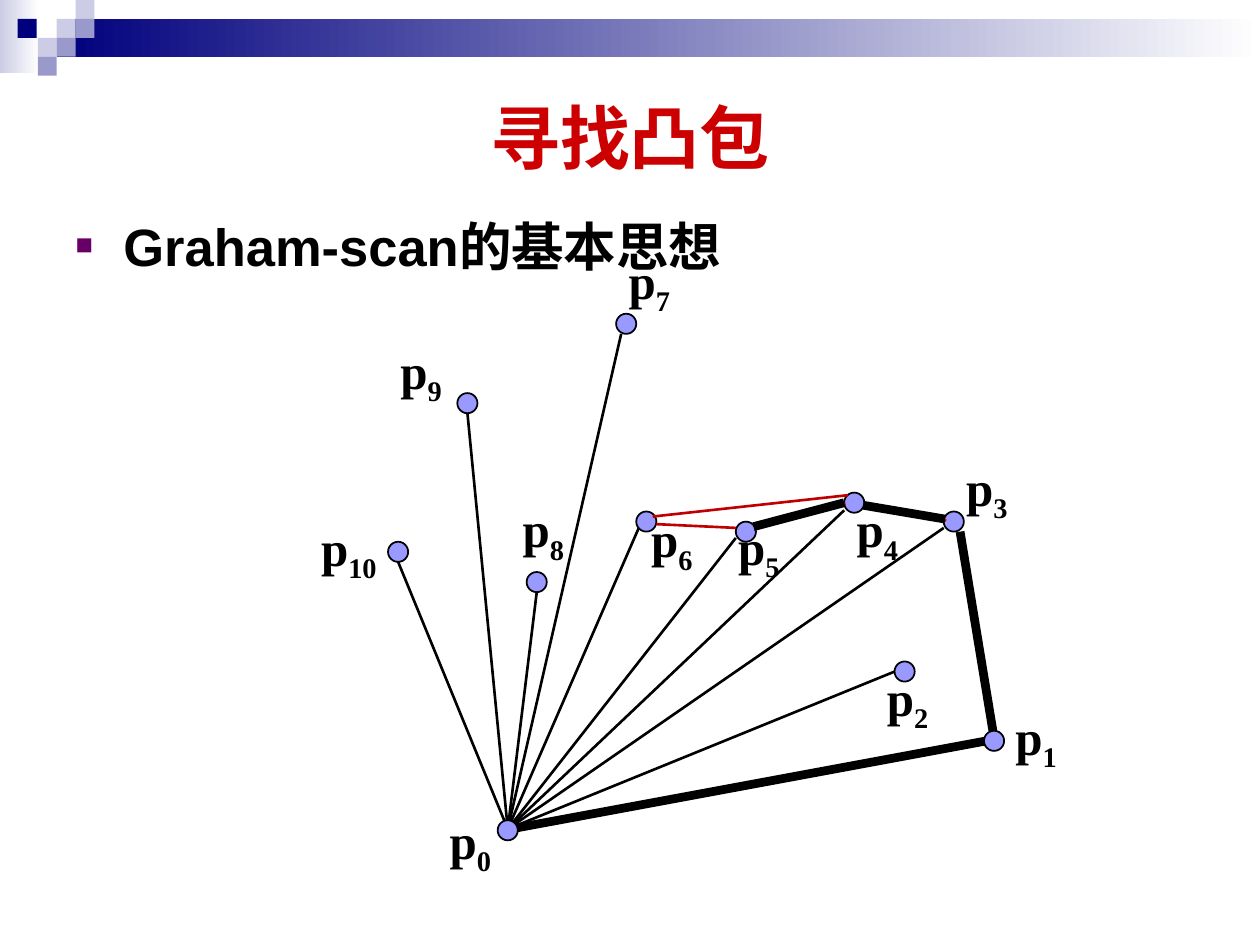
from lxml.etree import SubElement
from pptx import Presentation
from pptx.dml.color import RGBColor
from pptx.enum.shapes import MSO_CONNECTOR, MSO_SHAPE
from pptx.enum.text import MSO_ANCHOR, MSO_AUTO_SIZE, PP_ALIGN
from pptx.oxml.ns import qn
from pptx.util import Inches, Pt

COLORS = {
    "navy": "00007D", "pale": "CCCCE6", "mid": "9999CC", "white": "FFFFFF",
    "title": "CC0000", "bullet": "660066", "black": "000000",
    "dot": "9999FF", "red": "C00000",
}
DOT = 0.16
TILE = 0.15
PIVOT = (4.03, 6.58)

# Point number: (dot left and top, label left and top)
POINTS = {
    0: ((3.95, 6.51), (3.47, 6.38)),
    1: ((7.81, 5.8), (7.96, 5.56)),
    2: ((7.1, 5.25), (6.94, 5.25)),
    3: ((7.49, 4.06), (7.57, 3.58)),
    4: ((6.7, 3.91), (6.7, 3.91)),
    5: ((5.84, 4.14), (5.76, 4.05)),
    6: ((5.05, 4.06), (5.07, 3.99)),
    7: ((4.89, 2.49), (4.89, 1.94)),
    8: ((4.18, 4.54), (4.05, 3.91)),
    9: ((3.63, 3.12), (3.08, 2.65)),
    10: ((3.08, 4.3), (2.45, 4.06)),
}
RAY_ENDS = [
    (7.81, 5.88), (7.1, 5.33), (7.49, 4.19), (6.7, 4.05), (5.84, 4.27),
    (5.07, 4.19), (4.93, 2.65), (4.26, 4.7), (3.71, 3.28), (3.16, 4.46),
]
TESTED_EDGES = [
    ((5.21, 4.16), (5.84, 4.19)), ((5.18, 4.1), (6.73, 3.93)),
    ((6.86, 4.03), (7.51, 4.13)), ((5.99, 4.2), (6.71, 4)),
]
HULL_EDGES = [
    ((7.62, 4.22), (7.88, 5.8)), ((6.85, 4.01), (7.5, 4.12)),
    ((5.98, 4.18), (6.7, 3.99)),
]
TILES = [
    (0.45, 0.15, "pale"), (0.6, 0, "pale"), (0.6, 0.15, "mid"),
    (0.3, 0.3, "pale"), (0.14, 0.15, "navy"), (0.45, 0.3, "mid"),
    (0.3, 0.45, "mid"),
]


class SlideBuilder:
    def __init__(self, slide):
        self.slide = slide
        self.shapes = slide.shapes

    def color(self, name):
        return RGBColor.from_string(COLORS[name])

    def style(self, span, size, font, color):
        span.font.size = Pt(size)
        span.font.name = font
        span.font.bold = True
        span.font.color.rgb = self.color(color)

    def rect(self, left, top, width, height, start, end=None):
        box = self.shapes.add_shape(MSO_SHAPE.RECTANGLE, Inches(left), Inches(top),
                                    Inches(width), Inches(height))
        box.shadow.inherit = False
        box.line.fill.background()
        if end is None:
            box.fill.solid()
            box.fill.fore_color.rgb = self.color(start)
            return
        box.fill.gradient()
        box.fill.gradient_angle = 0
        for stop, name in zip(box.fill.gradient_stops, (start, end)):
            stop.color.rgb = self.color(name)

    def placeholder(self, box, place, text, size, color):
        box.left, box.top, box.width, box.height = map(Inches, place)
        frame = box.text_frame
        frame.text = text
        frame.auto_size = MSO_AUTO_SIZE.NONE
        para = frame.paragraphs[0]
        self.style(para.runs[0], size, "Arial", color)
        return para

    def title(self, text):
        box = self.shapes.title
        para = self.placeholder(box, (0.5, 0.5, 9, 1.16), text, 40, "title")
        box.text_frame.vertical_anchor = MSO_ANCHOR.MIDDLE
        para.alignment = PP_ALIGN.CENTER

    def body(self, text):
        box = self.slide.placeholders[1]
        para = self.placeholder(box, (0.5, 1.62, 9, 5.2), text, 30, "black")
        para.line_spacing = 1.05
        para.space_before = Pt(4.5)
        properties = para._p.get_or_add_pPr()
        properties.set("marL", str(Inches(0.38)))
        properties.set("indent", str(Inches(-0.38)))
        bullet_color = SubElement(properties, qn("a:buClr"))
        SubElement(bullet_color, qn("a:srgbClr"), val=COLORS["bullet"])
        SubElement(properties, qn("a:buSzPct"), val="55000")
        SubElement(properties, qn("a:buFont"), typeface="Arial")
        SubElement(properties, qn("a:buChar"), char="■")

    def dot(self, left, top):
        dot = self.shapes.add_shape(MSO_SHAPE.OVAL, Inches(left), Inches(top),
                                    Inches(DOT), Inches(DOT))
        dot.shadow.inherit = False
        dot.fill.solid()
        dot.fill.fore_color.rgb = self.color("dot")
        dot.line.color.rgb = self.color("black")
        dot.line.width = Pt(1)

    def label(self, left, top, number):
        width = 0.55 if number < 10 else 0.68
        box = self.shapes.add_textbox(Inches(left), Inches(top), Inches(width), Inches(0.57))
        frame = box.text_frame
        frame.word_wrap = False
        frame.auto_size = MSO_AUTO_SIZE.SHAPE_TO_FIT_TEXT
        para = frame.paragraphs[0]
        for text in ("p", str(number)):
            span = para.add_run()
            span.text = text
            self.style(span, 28, "Times New Roman", "black")
        span._r.get_or_add_rPr().set("baseline", "-25000")

    def line(self, start, end, color="black", width=1.5):
        line = self.shapes.add_connector(MSO_CONNECTOR.STRAIGHT,
                                         *map(Inches, (*start, *end)))
        line.line.color.rgb = self.color(color)
        line.line.width = Pt(width)
        SubElement(line._element.spPr, qn("a:effectLst"))


def main():
    deck = Presentation()
    deck.slide_width, deck.slide_height = Inches(10), Inches(7.5)
    page = SlideBuilder(deck.slides.add_slide(deck.slide_layouts[1]))

    # Header band and tiles
    page.rect(0, 0, 0.31, 0.58, "pale", "white")
    page.rect(0.45, 0.15, 9.55, 0.3, "navy", "white")
    for left, top, color in TILES:
        page.rect(left, top, TILE, TILE, color)

    # Title and list
    page.title("寻找凸包")
    page.body("Graham-scan的基本思想")

    # Points behind the rays, and all labels
    for number, (dot, label) in POINTS.items():
        if number > 1:
            page.dot(*dot)
        page.label(*label, number)

    # Rays from p0 and the first hull edge
    for end in RAY_ENDS:
        page.line(PIVOT, end)
    page.line((4.05, 6.58), (7.83, 5.88), width=5)

    # Points in front of the first hull edge
    for number in (0, 1):
        page.dot(*POINTS[number][0])

    # Tested edges, then the hull edges over them
    for start, end in TESTED_EDGES:
        page.line(start, end, "red")
    for start, end in HULL_EDGES:
        page.line(start, end, width=5)

    deck.save("out.pptx")


if __name__ == "__main__":
    main()
